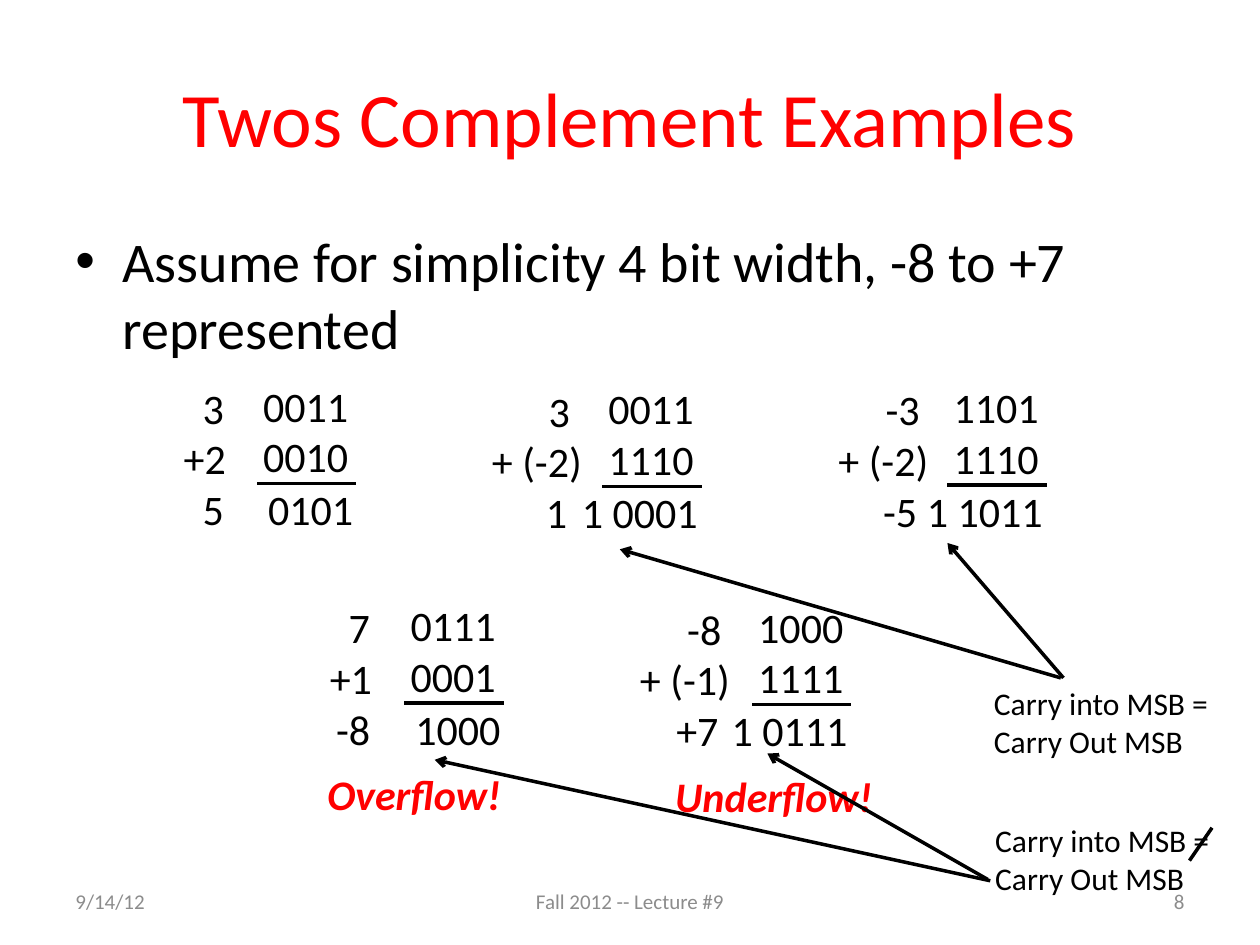
import pptx
import pptx.dml.color
import pptx.enum.shapes
import pptx.enum.text
import pptx.oxml
import pptx.oxml.ns
import pptx.util

Pt = pptx.util.Pt
ALIGN = pptx.enum.text.PP_ALIGN
ANCHOR = pptx.enum.text.MSO_ANCHOR
FONT = "Calibri"
BLACK, RED, GRAY = "000000", "FF0000", "8C8C8C"
SPACE = 5.4  # width of one indent step in the sums

# bits x, bits y, decimal x, decimal width, (operand, indent steps) pairs,
# operand bits, (decimal result, x, width), result bits
SUMS = [
    (143.3, 213.8, 97.9, 38.9, [("3", 2), ("+2", 0)],
     ["0011", "0010"], ("5", 108.7, 26.6), "0101"),
    (340.6, 215.3, 268.6, 72, [("3", 7), ("+ (-2)", 1)],
     ["0011", "1110"], ("1", 304.9, 27), "1 0001"),
    (537.8, 214.6, 466.6, 72, [("-3", 6), ("+ (-2)", 1)],
     ["1101", "1110"], ("-5", 497.5, 34.6), "1 1011"),
    (227.5, 339.1, 181.4, 38.9, [("7", 2), ("+1", 0)],
     ["0111", "0001"], ("-8", 185, 34.6), "1000"),
    (426.2, 340.1, 358.6, 66.2, [("-8", 5), ("+ (-1)", 0)],
     ["1000", "1111"], ("+7", 379.4, 38.9), "1 0111"),
]


def rgb(color):
    return pptx.dml.color.RGBColor.from_string(color)


def add_text(s, lines, x, y, w, h, size=24, color=BLACK, align=ALIGN.LEFT,
             anchor=ANCHOR.TOP, wrap=False, emphasis=False):
    sp = s.shapes.add_textbox(Pt(x), Pt(y), Pt(w), Pt(h))
    tf = sp.text_frame
    tf.word_wrap = wrap
    tf.vertical_anchor = anchor
    tf.text = "\n".join(lines)
    for p in tf.paragraphs:
        p.alignment = align
        for r in p.runs:
            r.font.name = FONT
            r.font.size = Pt(size)
            r.font.color.rgb = rgb(color)
            if emphasis:
                r.font.bold = r.font.italic = True
    return sp


def set_indent(p, left, first=0):
    pPr = p._p.get_or_add_pPr()
    pPr.set("marL", str(Pt(left)))
    pPr.set("indent", str(Pt(first)))
    return pPr


def add_bullet(p, char="•"):
    pPr = set_indent(p, 27, -27)
    for tag, key, value in (("a:buFont", "typeface", "Arial"),
                            ("a:buChar", "char", char)):
        pptx.oxml.ns.qn(tag)
        el = pptx.oxml.xmlchemy.OxmlElement(tag)
        el.set(key, value)
        pPr.append(el)


def add_line(s, x1, y1, x2, y2, arrow=False):
    sp = s.shapes.add_connector(pptx.enum.shapes.MSO_CONNECTOR.STRAIGHT,
                                Pt(x1), Pt(y1), Pt(x2), Pt(y2))
    sp.line.color.rgb = rgb(BLACK)
    sp.line.width = Pt(2)
    if arrow:
        tail = pptx.oxml.xmlchemy.OxmlElement("a:tailEnd")
        tail.set("type", "arrow")
        sp.line._get_or_add_ln().append(tail)
    sp._element.spPr.append(pptx.oxml.xmlchemy.OxmlElement("a:effectLst"))


def add_sum(s, x, y, dec_x, dec_w, operands, bits, result, result_bits):
    add_text(s, bits, x, y, 63.4, 65.5)
    sp = add_text(s, [t for t, _ in operands], dec_x, y + 1.2, dec_w, 65.5)
    for p, (_, steps) in zip(sp.text_frame.paragraphs, operands):
        set_indent(p, steps * SPACE)
    add_line(s, x + 3.6, y + 62.6, x + 60.3, y + 62.6)
    text, result_x, result_w = result
    add_text(s, [text], result_x, y + 59.1, result_w, 36)
    # The result ends at the same column, with or without a carry
    w = 81.4 if " " in result_bits else 63.4
    add_text(s, [result_bits], x + 66.2 - w, y + 59.1, w, 36)


def add_carry_note(s, x, y, arrows):
    add_text(s, ["Carry into MSB =", "Carry Out MSB"], x, y, 138.2, 51, size=18)
    for ends in arrows:
        add_line(s, *ends, arrow=True)


def main():
    prs = pptx.Presentation()
    prs.slide_width, prs.slide_height = Pt(720), Pt(540)
    s = prs.slides.add_slide(prs.slide_layouts[6])

    # Title and bullet
    add_text(s, ["Twos Complement Examples"], 36, 21.6, 648, 90, size=44,
             color=RED, align=ALIGN.CENTER, anchor=ANCHOR.MIDDLE, wrap=True)
    sp = add_text(s, ["Assume for simplicity 4 bit width, -8 to +7 represented"],
                  36, 126, 648, 89.3, size=32, wrap=True)
    add_bullet(sp.text_frame.paragraphs[0])

    # Footer
    for text, x, w, align in (("9/14/12", 36, 168, ALIGN.LEFT),
                              ("Fall 2012 -- Lecture #9", 246, 228, ALIGN.CENTER),
                              ("8", 516, 168, ALIGN.RIGHT)):
        add_text(s, [text], x, 500.4, w, 28.8, size=12, color=GRAY,
                 align=align, anchor=ANCHOR.MIDDLE, wrap=True)

    # Worked sums
    for example in SUMS:
        add_sum(s, *example)
    add_text(s, ["Overflow!"], 180, 435.6, 120.2, 36, color=RED, emphasis=True)
    add_text(s, ["Underflow!"], 378.7, 437, 134.6, 36, color=RED, emphasis=True)

    # Carry notes, the second with its equals sign struck through
    add_carry_note(s, 560.9, 387.4, [(607.7, 387.4, 541.4, 310.3),
                                     (606.2, 387.4, 354.2, 313.9)])
    add_carry_note(s, 561.6, 465.8, [(564.5, 502.6, 438.5, 430.6),
                                     (565.9, 503.3, 248.4, 434.2)])
    add_line(s, 679.7, 491.8, 692.6, 473)

    prs.save("out.pptx")


if __name__ == "__main__":
    main()
